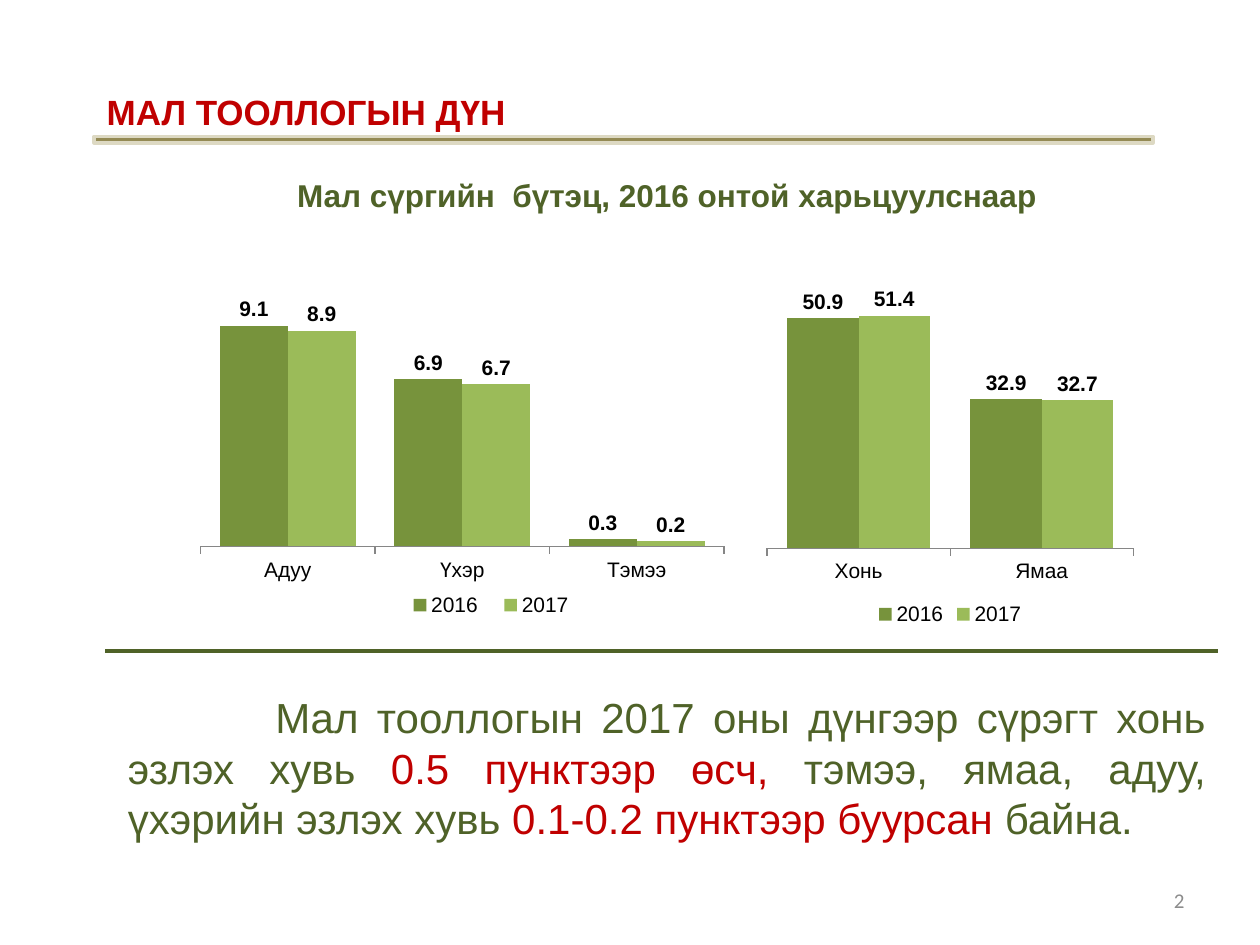
"""Build the livestock census slide with two column charts."""
from lxml import etree
from pptx import Presentation
from pptx import util as u
from pptx.chart.data import CategoryChartData
from pptx.dml.color import RGBColor
from pptx.enum import chart as charts, shapes, text
from pptx.oxml import ns

COLORS = {
    "red": "C00000", "green": "4F6228", "olive": "948A54", "sand": "DDD9C3",
    "gray": "8C8C8C", "black": "000000", "axis": "868686",
    "2016": "77933C", "2017": "9BBB59",
}


def add_text(box, runs, size, align, bold=False, font="Arial"):
    frame = slide.shapes.add_textbox(*[u.Cm(length) for length in box]).text_frame
    frame.word_wrap = True
    paragraph = frame.paragraphs[0]
    paragraph.alignment = align
    for words, color in runs:
        run = paragraph.add_run()
        run.text = words
        run.font.name, run.font.size, run.font.bold = font, u.Pt(size), bold
        run.font.color.rgb = RGBColor.from_string(COLORS[color])
    return frame


def set_layout(parent, position, values, target=None):
    for old in parent.findall(ns.qn("c:layout")):
        parent.remove(old)
    layout = etree.Element(ns.qn("c:layout"))
    manual = etree.SubElement(layout, ns.qn("c:manualLayout"))
    settings = [("layoutTarget", target)] if target else []
    settings += [("xMode", "edge"), ("yMode", "edge"), *zip("xywh", values)]
    for tag, value in settings:
        etree.SubElement(manual, ns.qn(f"c:{tag}")).set("val", str(value))
    parent.insert(position, layout)


presentation = Presentation()
presentation.slide_width, presentation.slide_height = u.Cm(25.4), u.Cm(19.05)
slide = presentation.slides.add_slide(presentation.slide_layouts[6])
align = text.PP_ALIGN

number = add_text((18.2, 17.65, 5.93, 1.01), [("2", "gray")], 12, align.RIGHT, font="Calibri")
number.vertical_anchor = text.MSO_ANCHOR.MIDDLE
add_text((1.9, 1.7, 23.5, 1.11), [("МАЛ ТООЛЛОГЫН ДҮН", "red")], 20, align.JUSTIFY, True)
add_text((2.12, 3.43, 22.65, 1.02),
         [("Мал сүргийн  бүтэц, 2016 онтой харьцуулснаар", "green")], 18, align.CENTER, True)

rule = slide.shapes.add_shape(shapes.MSO_SHAPE.RECTANGLE, u.Cm(1.9), u.Cm(2.75), u.Cm(21.34), u.Cm(0.13))
rule.shadow.inherit = False
rule.fill.solid()
rule.fill.fore_color.rgb = RGBColor.from_string(COLORS["olive"])
rule.line.color.rgb = RGBColor.from_string(COLORS["sand"])
rule.line.width = u.Pt(2)

divider = slide.shapes.add_connector(
    shapes.MSO_CONNECTOR.STRAIGHT, u.Cm(2.12), u.Cm(13.12), u.Cm(24.55), u.Cm(13.12))
divider.line.color.rgb = RGBColor.from_string(COLORS["green"])
divider.line.width = u.Pt(2.25)
etree.SubElement(divider._element.spPr, ns.qn("a:effectLst"))

summary = add_text((2.33, 13.82, 22.23, 3.33), [
    ("Мал тооллогын 2017 оны дүнгээр сүрэгт хонь эзлэх хувь ", "green"),
    ("0.5 пунктээр өсч, ", "red"),
    ("тэмээ, ямаа, адуу, үхэрийн эзлэх хувь ", "green"),
    ("0.1-0.2 пунктээр буурсан", "red"),
    (" байна.", "green"),
], 24, align.JUSTIFY)
summary.paragraphs[0]._p.get_or_add_pPr().set("indent", str(u.Cm(2.97)))

herds = [
    ((4.03, 5.92, 10.58, 6.98), ["Адуу", "Үхэр", "Тэмээ"],
     {"2016": [9.1, 6.9, 0.3], "2017": [8.9, 6.7, 0.2]},
     10, (0, 0.03, 1, 0.7), (0.37, 0.85, 0.37, 0.1)),
    ((15.45, 5.51, 7.41, 7.2), ["Хонь", "Ямаа"],
     {"2016": [50.9, 32.9], "2017": [51.4, 32.7]},
     60, (0, 0.01, 1, 0.76), None),
]
for box, animals, shares, maximum, plot_layout, legend_layout in herds:
    data = CategoryChartData(number_format="###0.0")
    data.categories = animals
    for year, values in shares.items():
        data.add_series(year, values)
    chart = slide.shapes.add_chart(
        charts.XL_CHART_TYPE.COLUMN_CLUSTERED, *[u.Cm(length) for length in box], data).chart
    chart.has_title = False
    chart.font.name, chart.font.size = "Arial", u.Pt(12)
    chart.font.color.rgb = RGBColor.from_string(COLORS["black"])
    chart.has_legend = True
    chart.legend.position = charts.XL_LEGEND_POSITION.BOTTOM
    chart.legend.include_in_layout = False
    if legend_layout:
        set_layout(chart.legend._element, 1, legend_layout)
    set_layout(chart._chartSpace.chart.plotArea, 0, plot_layout, "inner")

    chart.value_axis.minimum_scale, chart.value_axis.maximum_scale = 0, maximum
    chart.value_axis.has_major_gridlines = False
    chart.value_axis.visible = False
    chart.category_axis.major_tick_mark = charts.XL_TICK_MARK.OUTSIDE
    chart.category_axis.format.line.color.rgb = RGBColor.from_string(COLORS["axis"])

    plot = chart.plots[0]
    plot.gap_width, plot.overlap, plot.vary_by_categories = 57, 0, False
    for series in plot.series:
        series.format.fill.solid()
        series.format.fill.fore_color.rgb = RGBColor.from_string(COLORS[series.name])
        labels = series.data_labels
        labels.show_value = True
        labels.number_format, labels.number_format_is_linked = "###0.0", False
        labels.position = charts.XL_LABEL_POSITION.OUTSIDE_END
        labels.font.name, labels.font.size, labels.font.bold = "Arial", u.Pt(12), True
        labels.font.color.rgb = RGBColor.from_string(COLORS["black"])

presentation.save("out.pptx")
